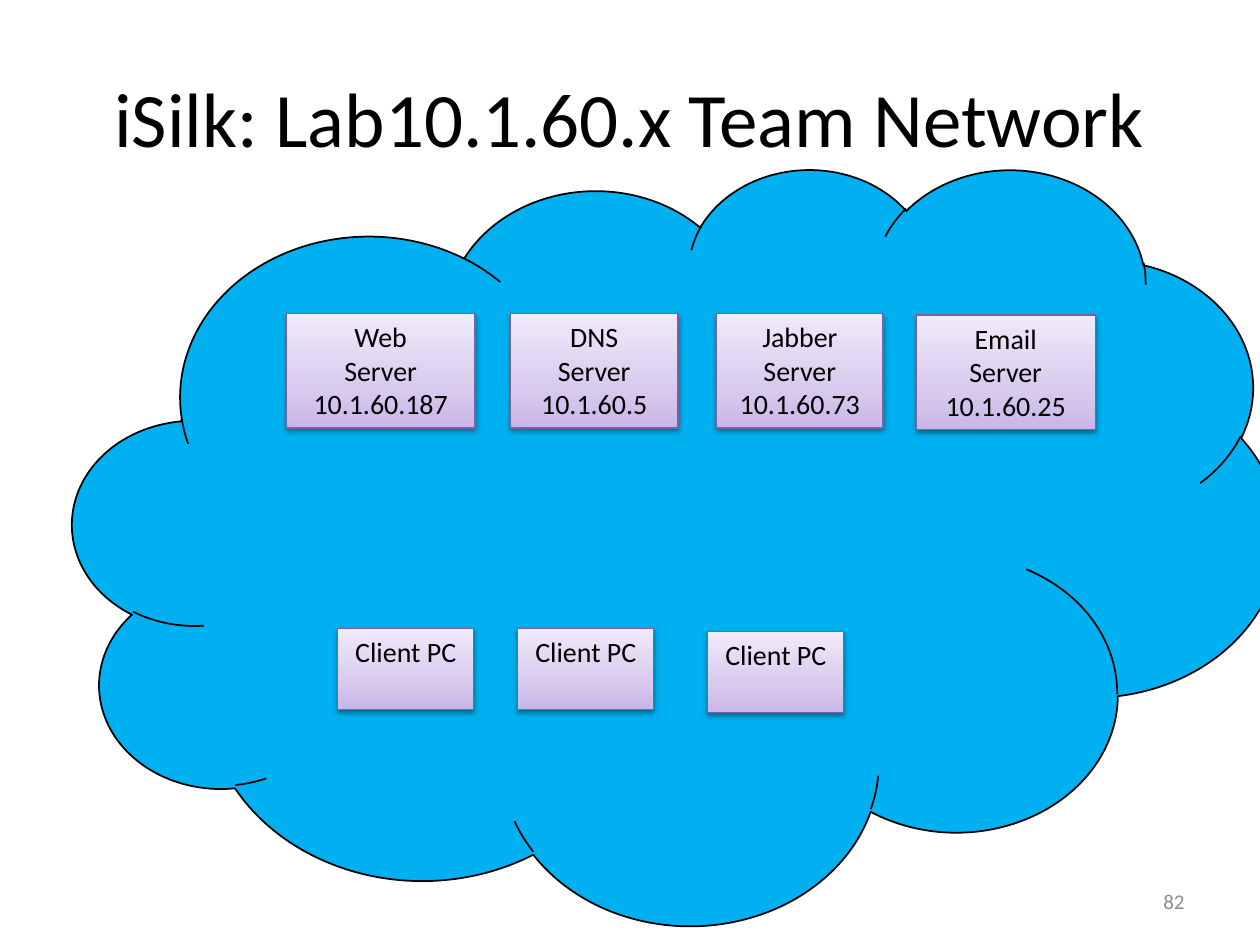
import copy
from dataclasses import dataclass

import pptx
import pptx.dml.color
import pptx.enum.shapes
import pptx.enum.text
import pptx.oxml
import pptx.oxml.ns
import pptx.util
from pptx.util import Cm

SHAPE = pptx.enum.shapes.MSO_SHAPE
ALIGN = pptx.enum.text.PP_ALIGN
ANCHOR = pptx.enum.text.MSO_ANCHOR


@dataclass(frozen=True)
class Theme:
    font: str = "Calibri"
    title_size: int = 44
    box_size: int = 16
    number_size: int = 12
    ink: str = "000000"
    muted: str = "8C8C8C"
    cloud: str = "00B0F0"
    box_line: str = "7D60A0"
    box_stops: tuple = ((0, "C9B5E8"), (0.35, "D8CBEE"), (1, "F0EAF9"))


THEME = Theme()

# Left, top, width in cm, then the lines of text
SERVERS = [
    (5.77, 6.32, 3.81, ("Web", "Server", "10.1.60.187")),
    (10.29, 6.32, 3.38, ("DNS", "Server", "10.1.60.5")),
    (14.45, 6.32, 3.35, ("Jabber", "Server", "10.1.60.73")),
    (18.47, 6.35, 3.61, ("Email", "Server", "10.1.60.25")),
]
CLIENTS = [(6.81, 12.67), (14.27, 12.73), (10.44, 12.67)]
SERVER_HEIGHT = 2.31
CLIENT_WIDTH, CLIENT_HEIGHT = 2.74, 1.63


def rgb(value):
    return pptx.dml.color.RGBColor.from_string(value)


def apply(target, formats):
    for name, value in formats.items():
        setattr(target, name, value)


def write(sp, lines, size, color, align, anchor):
    tf = sp.text_frame
    apply(tf, {"word_wrap": True, "vertical_anchor": anchor,
               "auto_size": pptx.enum.text.MSO_AUTO_SIZE.NONE})
    for i, line in enumerate(lines):
        p = tf.paragraphs[0] if i == 0 else tf.add_paragraph()
        p.alignment = align
        r = p.add_run()
        r.text = line
        apply(r.font, {"name": THEME.font, "size": pptx.util.Pt(size)})
        r.font.color.rgb = rgb(color)


def add_label(s, box, text, size, color, align):
    sp = s.shapes.add_textbox(*map(Cm, box))
    write(sp, [text], size, color, align, ANCHOR.MIDDLE)


def add_outlined(s, kind, box, line, width):
    sp = s.shapes.add_shape(kind, *map(Cm, box))
    sp.shadow.inherit = False
    sp.line.color.rgb = rgb(line)
    sp.line.width = pptx.util.Pt(width)
    return sp


def fill_gradient(sp):
    fill = sp.fill
    fill.gradient()
    fill.gradient_angle = 90
    gs_list = sp._element.spPr.find(".//" + pptx.oxml.ns.qn("a:gsLst"))
    gs_list.append(copy.deepcopy(gs_list[0]))
    for stop, (position, color) in zip(fill.gradient_stops, THEME.box_stops):
        stop.position = position
        stop.color.rgb = rgb(color)


def add_shadow(sp):
    effects = sp._element.spPr.find(pptx.oxml.ns.qn("a:effectLst"))
    effects.append(pptx.oxml.parse_xml(
        f'<a:outerShdw {pptx.oxml.ns.nsdecls("a")} blurRad="40000" '
        'dist="20000" dir="5400000" rotWithShape="0">'
        f'<a:srgbClr val="{THEME.ink}"><a:alpha val="38000"/></a:srgbClr>'
        '</a:outerShdw>'))


def add_machine(s, box, lines):
    sp = add_outlined(s, SHAPE.RECTANGLE, box, THEME.box_line, 0.75)
    fill_gradient(sp)
    add_shadow(sp)
    write(sp, lines, THEME.box_size, THEME.ink, ALIGN.CENTER, ANCHOR.TOP)


def main():
    prs = pptx.Presentation()
    apply(prs, {"slide_width": Cm(25.4), "slide_height": Cm(19.05)})
    s = prs.slides.add_slide(prs.slide_layouts[6])

    # Title and slide number
    add_label(s, (1.27, 0.76, 22.86, 3.18), "iSilk: Lab10.1.60.x Team Network",
              THEME.title_size, THEME.ink, ALIGN.CENTER)
    add_label(s, (18.21, 17.65, 5.92, 1.02), "82",
              THEME.number_size, THEME.muted, ALIGN.RIGHT)

    # Network cloud
    cloud = add_outlined(s, SHAPE.CLOUD, (1.47, 3.38, 24.33, 15.24),
                         THEME.ink, 1)
    cloud.fill.solid()
    cloud.fill.fore_color.rgb = rgb(THEME.cloud)

    # Machines inside the cloud
    for left, top, width, lines in SERVERS:
        add_machine(s, (left, top, width, SERVER_HEIGHT), lines)
    for left, top in CLIENTS:
        add_machine(s, (left, top, CLIENT_WIDTH, CLIENT_HEIGHT), ["Client PC"])

    prs.save("out.pptx")


if __name__ == "__main__":
    main()
